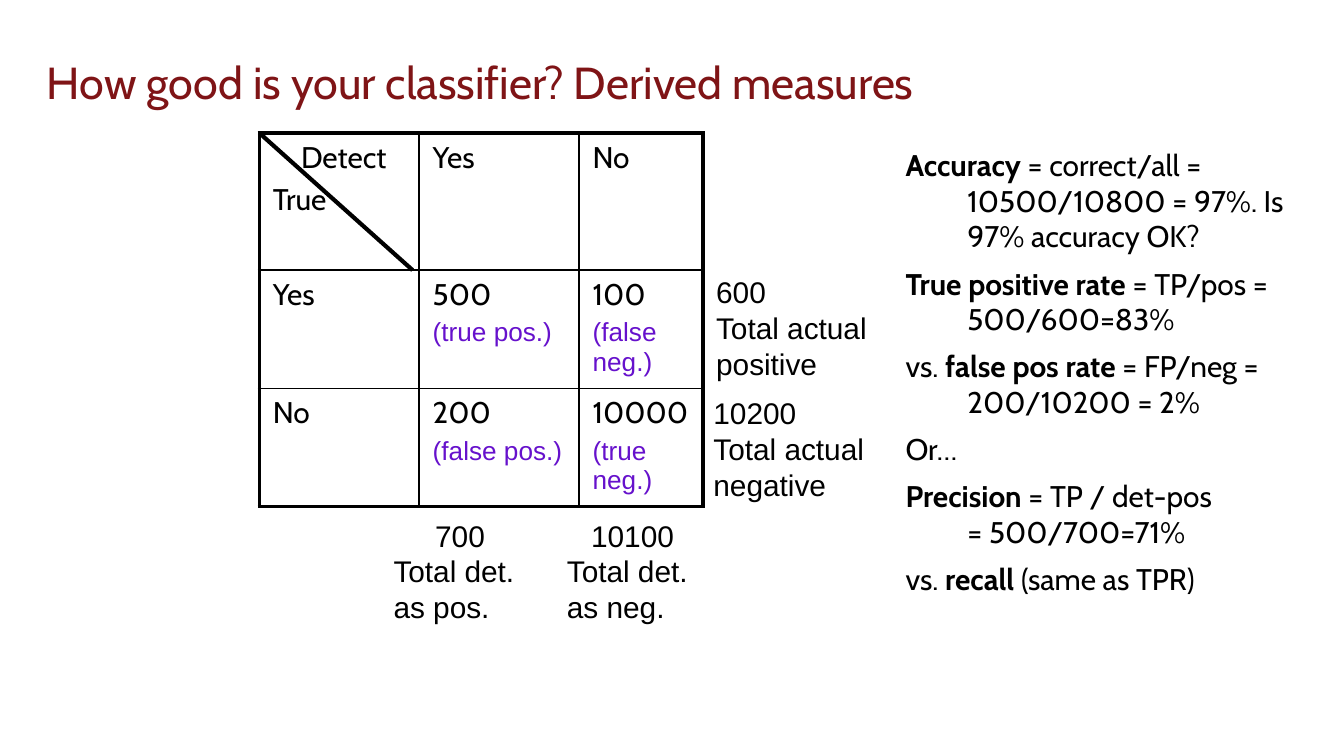
"""Build a slide with a confusion matrix, its totals and the measures derived from it."""
from dataclasses import dataclass
from itertools import product

import pptx
import pptx.dml.color
import pptx.enum.shapes
import pptx.enum.text
import pptx.oxml
import pptx.oxml.ns
import pptx.util

COLORS = {"title": "7F1416", "ink": "000000", "note": "6611CC"}
UNIT = pptx.util.Inches(10) // 100
THICK, THIN = 2.25, 1


@dataclass
class Box:
    """A place on a grid of 100 columns across the slide."""
    left: float
    top: float
    width: float
    height: float

    def emu(self) -> list[int]:
        return [units(v) for v in (self.left, self.top, self.width, self.height)]


@dataclass
class Para:
    """A paragraph whose *starred* parts are bold."""
    text: str
    size: float = 16
    font: str = "Cabin"
    color: str = "ink"
    before: float = 0
    margin: float = 0
    hang: float = 0


@dataclass
class Total:
    """A sum beside the matrix with its label lines."""
    box: Box
    value: str
    lines: tuple[str, str]
    shift: float = 0


TABLE = Box(19.3, 9.9, 33, 27.8)
COLUMNS = (11.9, 11.9, 9.2)
ROWS = (10.2, 8.8, 8.8)
CELLS = (
    (("Detect", "True"), ("Yes", ""), ("No", "")),
    (("Yes", ""), ("500", "(true pos.)"), ("100", "(false neg.)")),
    (("No", ""), ("200", "(false pos.)"), ("10000", "(true neg.)")),
)
TOTALS = (
    Total(Box(52.3, 19.9, 13.9, 9.1), "600", ("Total actual", "positive")),
    Total(Box(52.1, 28.9, 15.1, 9.3), "10200", ("Total actual", "negative")),
    Total(Box(28.3, 38, 13.4, 9.3), "700", ("Total det.", "as pos."), 3.1),
    Total(Box(41.2, 38, 13.4, 9.3), "10100", ("Total det.", "as neg."), 1.8),
)
MEASURES = (
    "*Accuracy* = correct/all = 10500/10800 = 97%. Is 97% accuracy OK?",
    "*True positive rate* = TP/pos = 500/600=83%",
    "vs. *false pos rate* = FP/neg = 200/10200 = 2%",
    "Or…",
    "*Precision* = TP / det-pos\n= 500/700=71%",
    "vs. *recall* (same as TPR)",
)


def units(count: float) -> int:
    return round(count * UNIT)


def rgb(name: str) -> pptx.dml.color.RGBColor:
    return pptx.dml.color.RGBColor.from_string(COLORS[name])


def add_text(p, text: str, *, size: float, font: str, color: str) -> None:
    for i, part in enumerate(text.split("*")):
        for j, line in enumerate(part.split("\n")):
            if j:
                p.add_line_break()
            if line:
                r = p.add_run()
                r.text = line
                r.font.size = pptx.util.Pt(size)
                r.font.name = font
                r.font.bold = i % 2 == 1
                r.font.color.rgb = rgb(color)


def fill_frame(tf, paras: list[Para]) -> None:
    for i, para in enumerate(paras):
        p = tf.add_paragraph() if i else tf.paragraphs[0]
        p.space_before = pptx.util.Pt(para.before if i else 0)
        pPr = p._p.get_or_add_pPr()
        pPr.set("marL", str(units(para.margin)))
        pPr.set("indent", str(units(-para.hang)))
        add_text(p, para.text, size=para.size, font=para.font, color=para.color)


def add_box(s, box: Box, paras: list[Para], inset: float = 1, anchor: str = "TOP") -> None:
    tf = s.shapes.add_textbox(*box.emu()).text_frame
    tf.word_wrap = True
    tf.vertical_anchor = pptx.enum.text.MSO_ANCHOR[anchor]
    tf.margin_top = tf.margin_bottom = units(inset)
    tf.margin_left = tf.margin_right = units(1)
    fill_frame(tf, paras)


def set_borders(cell, widths: dict[str, float]) -> None:
    tcPr = cell._tc.get_or_add_tcPr()
    for side, width in widths.items():
        tcPr.append(pptx.oxml.parse_xml(
            f'<a:ln{side} {pptx.oxml.ns.nsdecls("a")} w="{pptx.util.Pt(width)}"><a:solidFill>'
            f'<a:srgbClr val="{COLORS["ink"]}"/></a:solidFill></a:ln{side}>'))
    cell.fill.background()


def cell_paras(row: int, col: int) -> list[Para]:
    first, second = CELLS[row][col]
    corner = row == col == 0
    paras = [Para(first, margin=2.1 if corner else 0)]
    if corner:
        paras.append(Para(second, before=3.2))
    elif second:
        paras.append(Para(second, 14, "Arial", "note", before=2.8))
    return paras


def add_matrix(s) -> None:
    table = s.shapes.add_table(len(ROWS), len(COLUMNS), *TABLE.emu()).table
    table.first_row = table.horz_banding = False
    for column, width in zip(table.columns, COLUMNS):
        column.width = units(width)
    for row, height in zip(table.rows, ROWS):
        row.height = units(height)
    for row, col in product(range(len(ROWS)), range(len(COLUMNS))):
        cell = table.cell(row, col)
        edges = {"L": col == 0, "R": col == len(COLUMNS) - 1,
                 "T": row == 0, "B": row == len(ROWS) - 1}
        set_borders(cell, {k: THICK if outer else THIN for k, outer in edges.items()})
        fill_frame(cell.text_frame, cell_paras(row, col))


def add_diagonal(s) -> None:
    ends = (TABLE.left, TABLE.top, TABLE.left + 11.4, TABLE.top + ROWS[0])
    sp = s.shapes.add_connector(pptx.enum.shapes.MSO_CONNECTOR.STRAIGHT, *map(units, ends))
    sp.line.color.rgb = rgb("ink")
    sp.line.width = pptx.util.Pt(THICK)
    sp._element.spPr.append(pptx.oxml.parse_xml(
        f'<a:effectLst {pptx.oxml.ns.nsdecls("a")}/>'))


def add_total(s, total: Total) -> None:
    paras = [Para(total.value, font="Arial", margin=total.shift)]
    paras += [Para(line, font="Arial") for line in total.lines]
    add_box(s, total.box, paras, inset=0.5)


def main() -> None:
    prs = pptx.Presentation()
    prs.slide_width, prs.slide_height = units(100), units(56.25)
    s = prs.slides.add_slide(prs.slide_layouts[6])
    title = Para("How good is your classifier? Derived measures", 24, color="title")
    add_box(s, Box(2.5, 0, 94.8, 9.1), [title], anchor="BOTTOM")
    add_box(s, Box(66, 9.9, 33, 40.9),
            [Para(text, before=6, margin=5, hang=4.6) for text in MEASURES])
    add_matrix(s)
    add_diagonal(s)
    for total in TOTALS:
        add_total(s, total)
    prs.save("out.pptx")


if __name__ == "__main__":
    main()
